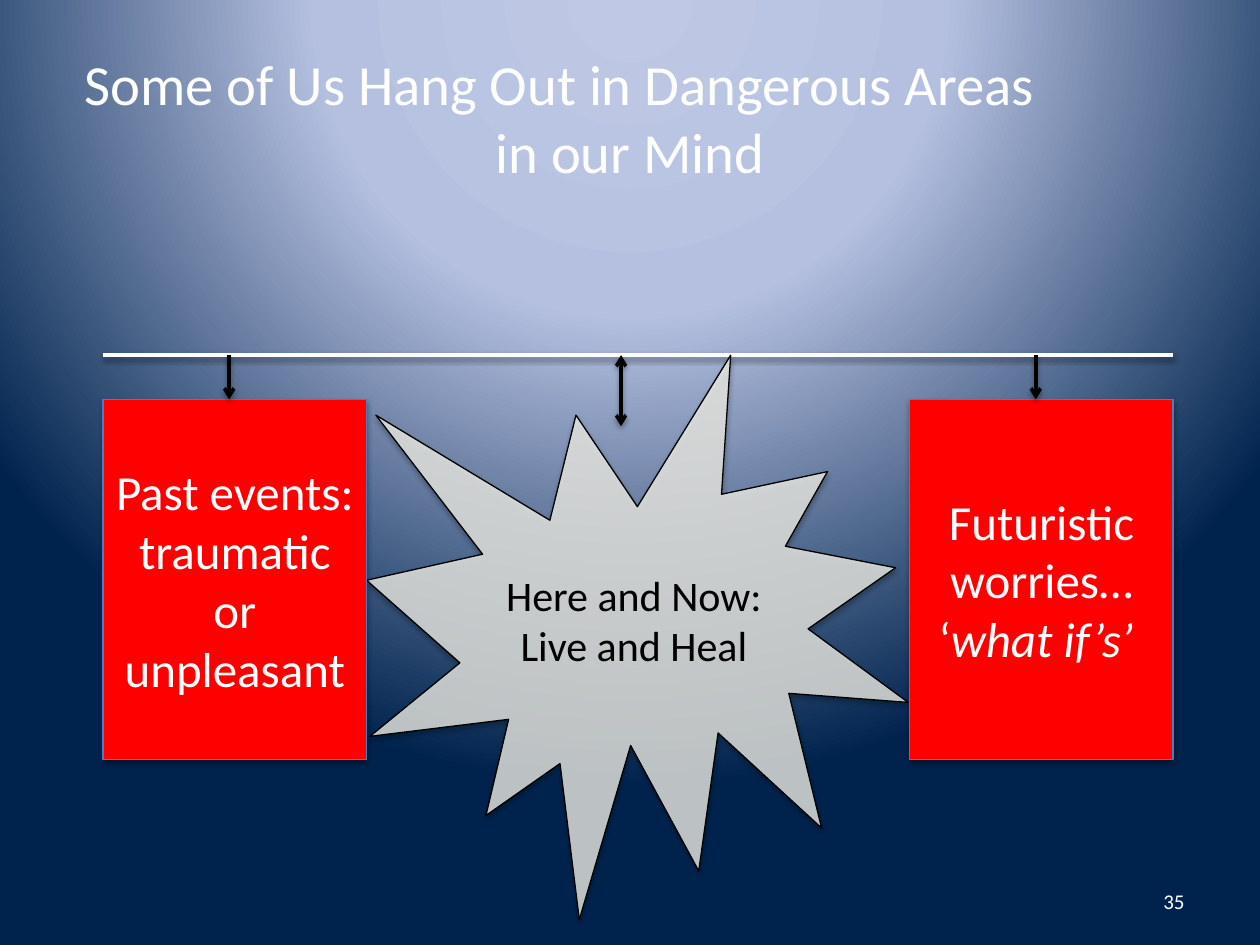
from pptx import Presentation
from pptx.dml.color import RGBColor
from pptx.enum.shapes import MSO_CONNECTOR as Link, MSO_SHAPE as Preset
from pptx.enum.text import MSO_ANCHOR as Anchor, PP_ALIGN as Align
from pptx.oxml import parse_xml
from pptx.oxml.ns import nsdecls, qn
from pptx.util import Cm, Pt
from lxml.etree import SubElement

WHITE = RGBColor(0xFF, 0xFF, 0xFF)
BLACK = RGBColor(0x00, 0x00, 0x00)
RED = RGBColor(0xFF, 0x00, 0x00)
STEEL = RGBColor(0x4B, 0x7E, 0xBC)
IVORY = RGBColor(0xF5, 0xF4, 0xED)
GLOW = RGBColor(0xBF, 0xC9, 0xE5)
HAZE = RGBColor(0xB5, 0xC0, 0xE0)
NAVY = RGBColor(0x00, 0x23, 0x4D)


class Painter:
    font_name = "Calibri"

    def __init__(self, page):
        self.page = page

    def background(self, stops):
        colors = "".join(
            f'<a:gs pos="{place * 1000}"><a:srgbClr val="{color}"/></a:gs>'
            for place, color in stops)
        self.page.element[0].insert(0, parse_xml(
            f'<p:bg {nsdecls("p", "a")}><p:bgPr><a:gradFill rotWithShape="1">'
            f'<a:gsLst>{colors}</a:gsLst><a:path path="circle">'
            '<a:fillToRect l="50000" t="-80000" r="50000" b="180000"/></a:path>'
            '</a:gradFill><a:effectLst/></p:bgPr></p:bg>'))

    def shadow(self, item, distance, opacity):
        item.element.spPr.append(parse_xml(
            f'<a:effectLst {nsdecls("a")}><a:outerShdw blurRad="{Pt(3.1)}" '
            f'dist="{Pt(distance)}" dir="5400000" rotWithShape="0">'
            f'<a:srgbClr val="{BLACK}"><a:alpha val="{opacity * 1000}"/>'
            '</a:srgbClr></a:outerShdw></a:effectLst>'))

    def label(self, box, paragraphs, size, color, align=Align.CENTER):
        frame = box.text_frame
        frame.word_wrap = True
        frame.vertical_anchor = Anchor.MIDDLE
        style = {"name": self.font_name, "size": Pt(size), "italic": False}
        for index, spans in enumerate(paragraphs):
            para = frame.add_paragraph() if index else frame.paragraphs[0]
            para.alignment = align
            for text, changes in spans:
                span = para.add_run()
                span.text = text
                span.font.color.rgb = color
                for key, value in {**style, **changes}.items():
                    setattr(span.font, key, value)

    def text(self, bounds, paragraphs, size, align=Align.CENTER):
        box = self.page.shapes.add_textbox(*map(Cm, bounds))
        self.label(box, paragraphs, size, WHITE, align)
        return box

    def shape(self, preset, bounds, fill, outline, paragraphs, size, color,
              opacity=100):
        box = self.page.shapes.add_shape(preset, *map(Cm, bounds))
        box.fill.solid()
        box.fill.fore_color.rgb = fill
        if opacity < 100:
            tint = box.element.spPr.find(qn("a:solidFill"))[0]
            SubElement(tint, qn("a:alpha"), val=str(opacity * 1000))
        box.line.color.rgb = outline
        box.line.width = Pt(0.75)
        self.shadow(box, 1.8, 35)
        self.label(box, paragraphs, size, color)

    def line(self, start, end, color, arrows=()):
        link = self.page.shapes.add_connector(
            Link.STRAIGHT, *map(Cm, (*start, *end)))
        link.line.color.rgb = color
        link.line.width = Pt(2)
        for arrow in arrows:
            SubElement(link.element.spPr.find(qn("a:ln")), qn(f"a:{arrow}"),
                       type="arrow")
        self.shadow(link, 1.6, 38)


def main():
    deck = Presentation()
    deck.slide_width, deck.slide_height = Cm(25.4), Cm(19.05)
    page = deck.slides.add_slide(deck.slide_layouts[6])
    painter = Painter(page)
    painter.background([(0, GLOW), (40, HAZE), (100, NAVY)])

    title = painter.text(
        (1.27, 0.76, 22.86, 3.18),
        [[("Some of Us Hang Out in Dangerous Areas", {})], [("in our Mind", {})]],
        32.4)
    title.text_frame.paragraphs[0].alignment = Align.LEFT
    next(title.element.iter(qn("a:pPr"))).set("marL", str(Cm(0.19)))

    left, right, bar_top = 2.08, 23.65, 7.16
    box_top, box_width, box_height = 8.05, 5.31, 7.26
    painter.line((left, bar_top), (right, bar_top), WHITE)
    painter.shape(
        Preset.EXPLOSION1, (left + box_width, bar_top, 10.92, 11.38), IVORY, BLACK,
        [[("Here and Now:", {})], [("Live and Heal", {})]], 24, BLACK, 77)

    worries = [("Futuristic worries… ‘", {}), ("what if’s’ ", {"italic": True})]
    past = [("Past events: traumatic or unpleasant", {})]
    for box_left, spans in ((right - box_width, worries), (left, past)):
        painter.shape(
            Preset.RECTANGLE, (box_left, box_top, box_width, box_height),
            RED, STEEL, [spans], 28, WHITE)

    for x, bottom, arrows in (
            (4.62, box_top, ["tailEnd"]),
            (12.52, 8.59, ["headEnd", "tailEnd"]),
            (20.88, box_top, ["tailEnd"])):
        painter.line((x, bar_top), (x, bottom), BLACK, arrows)

    painter.text((18.21, 17.65, 5.92, 1.02), [[("35", {})]], 12, Align.RIGHT)
    deck.save("out.pptx")


if __name__ == "__main__":
    main()
